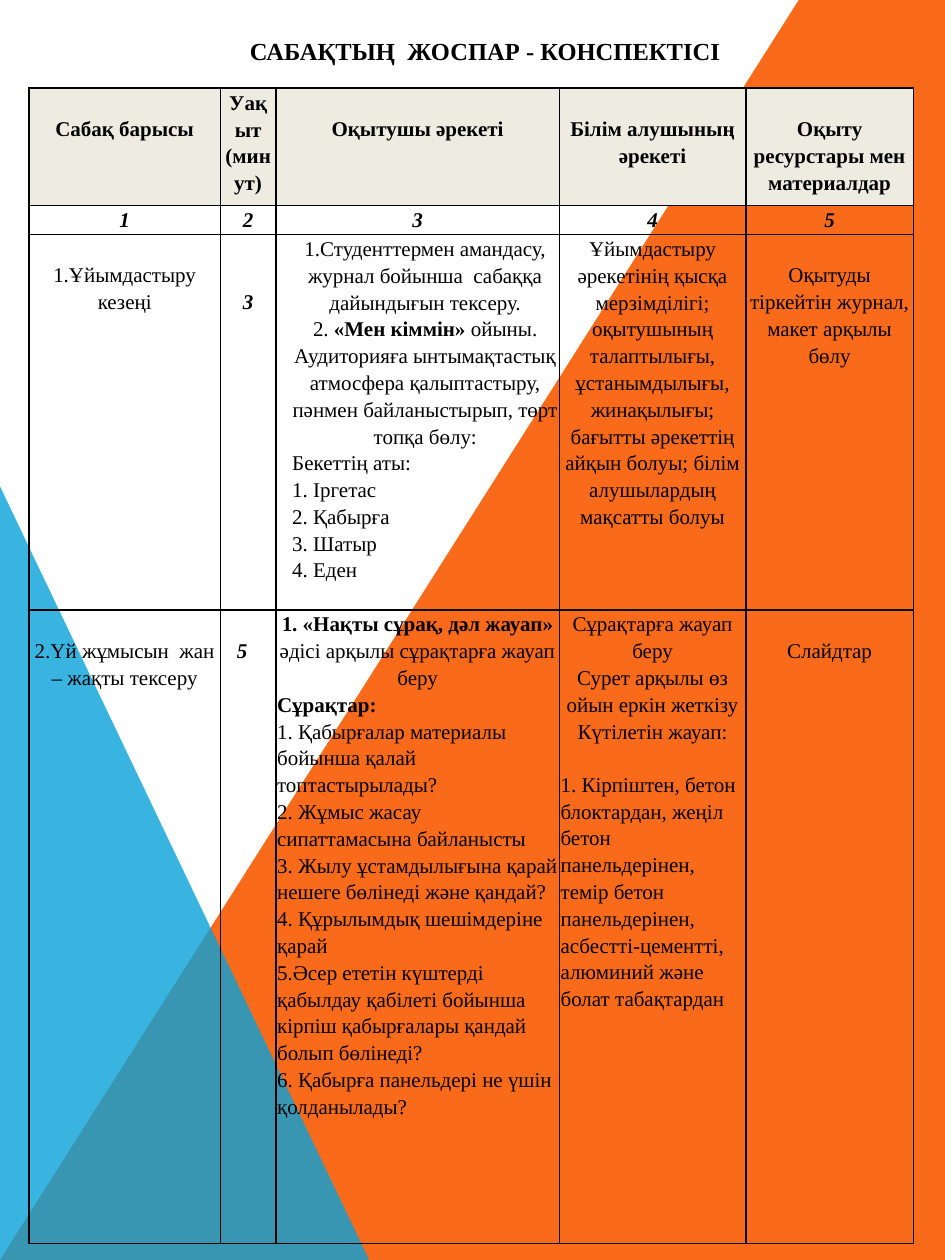
from typing import NamedTuple

from lxml import etree
from pptx import Presentation
from pptx.dml.color import RGBColor
from pptx.enum.shapes import MSO_SHAPE
from pptx.enum.text import MSO_ANCHOR, MSO_AUTO_SIZE, PP_ALIGN
from pptx.oxml.ns import qn
from pptx.util import Inches, Pt

CENTER, LEFT = PP_ALIGN.CENTER, PP_ALIGN.LEFT
TOP, MIDDLE = MSO_ANCHOR.TOP, MSO_ANCHOR.MIDDLE
FIXED_SIZE = MSO_AUTO_SIZE.NONE
RIGHT_TRIANGLE = MSO_SHAPE.RIGHT_TRIANGLE

FONT = "Times New Roman"
BLACK, ORANGE, BLUE, HEADER_FILL = "000000", "F96A1B", "08A1D9", "EEECE1"
LINE_HEIGHT = 0.21
COLUMN_WIDTHS = [1.52, 0.44, 2.25, 1.48, 1.33]
ROW_HEIGHTS = [0.93, 0.23, 2.98, 5.03]


class Line(NamedTuple):
    """A paragraph whose ** marks enclose bold words."""
    text: str
    align: PP_ALIGN = CENTER
    indent: float = 0
    italic: bool = False
    gap: float = 0


class Entry(NamedTuple):
    """The paragraphs of a cell and the number of lines they start below its top."""
    lines: list
    offset: int = 0


HEADINGS = [
    Entry([Line("**Сабақ барысы**")], 1),
    Entry([Line("**Уақыт (минут)**")]),
    Entry([Line("**Оқытушы әрекеті**")], 1),
    Entry([Line("**Білім алушының әрекеті**")], 1),
    Entry([Line("**Оқыту ресурстары мен материалдар**")], 1),
]
NUMBERS = [Entry([Line(f"**{number}**", italic=True)]) for number in range(1, 6)]

STATIONS = ["Бекеттің аты:", "1. Іргетас", "2. Қабырға", "3. Шатыр", "4. Еден"]
ORGANISATION = [
    Entry([Line("1.Ұйымдастыру кезеңі")], 1),
    Entry([Line("**3**", italic=True)], 2),
    Entry([
        Line("1.Студенттермен амандасу, журнал бойынша  сабаққа дайындығын тексеру.",
             indent=0.12),
        Line("2. **«Мен кіммін»** ойыны. Аудиторияға ынтымақтастық атмосфера "
             "қалыптастыру, пәнмен байланыстырып, төрт топқа бөлу:", indent=0.12),
        *[Line(station, LEFT, 0.12) for station in STATIONS],
    ]),
    Entry([Line("Ұйымдастыру әрекетінің қысқа мерзімділігі; оқытушының талаптылығы, "
                "ұстанымдылығы, жинақылығы; бағытты әрекеттің айқын болуы; "
                "білім алушылардың мақсатты болуы")]),
    Entry([Line("Оқытуды тіркейтін журнал, макет арқылы бөлу")], 1),
]

QUESTIONS = [
    "**Сұрақтар:**",
    "1. Қабырғалар материалы бойынша қалай топтастырылады?",
    "2. Жұмыс жасау сипаттамасына байланысты",
    "3. Жылу ұстамдылығына қарай нешеге бөлінеді және қандай?",
    "4. Құрылымдық шешімдеріне қарай",
    "5.Әсер ететін күштерді қабылдау қабілеті бойынша кірпіш қабырғалары "
    "қандай болып бөлінеді?",
    "6. Қабырға панельдері не үшін қолданылады?",
]
HOMEWORK = [
    Entry([Line("2.Үй жұмысын  жан – жақты тексеру")], 1),
    Entry([Line("**5**", LEFT, 0.12, italic=True)], 1),
    Entry([
        Line("**1. «Нақты сұрақ, дәл жауап»** әдісі арқылы сұрақтарға жауап беру"),
        *[Line(question, LEFT) for question in QUESTIONS],
    ]),
    Entry([
        Line("Сұрақтарға жауап беру"),
        Line("Сурет арқылы өз ойын еркін жеткізу"),
        Line("Күтілетін жауап:"),
        Line("1. Кірпіштен, бетон блоктардан, жеңіл бетон панельдерінен, темір бетон "
             "панельдерінен, асбестті-цементті, алюминий және болат табақтардан",
             LEFT, gap=LINE_HEIGHT),
    ]),
    Entry([Line("Слайдтар")], 1),
]


def rgb(hex_color):
    """Return the colour of a hex string."""
    return RGBColor.from_string(hex_color)


def style_font(font, size, bold, italic=False):
    """Apply the lesson plan's typeface."""
    font.name, font.size, font.bold, font.italic = FONT, Pt(size), bold, italic
    font.color.rgb = rgb(BLACK)


def fill_plain(shape, color):
    """Give a background shape a flat fill without outline or shadow."""
    shape.shadow.inherit = False
    shape.fill.solid()
    shape.fill.fore_color.rgb = rgb(color)
    shape.line.fill.background()


def add_backdrop(slide):
    """Draw the orange slope and the translucent blue triangle."""
    builder = slide.shapes.build_freeform(0, Inches(10))
    corners = [(6.34, 0), (7.5, 0), (7.5, 10)]
    builder.add_line_segments([(Inches(x), Inches(y)) for x, y in corners], close=True)
    fill_plain(builder.convert_to_shape(), ORANGE)

    triangle = slide.shapes.add_shape(
        RIGHT_TRIANGLE, 0, Inches(3.86), Inches(2.93), Inches(6.14))
    fill_plain(triangle, BLUE)
    color = triangle._element.spPr.find(".//" + qn("a:srgbClr"))
    etree.SubElement(color, qn("a:alpha"), val="80000")


def set_title(slide, text):
    """Place and format the heading of the plan."""
    title = slide.shapes.title
    title.left, title.top = Inches(1.43), Inches(0.23)
    title.width, title.height = Inches(4.84), Inches(0.34)
    frame = title.text_frame
    frame.text = text
    frame.word_wrap = True
    frame.auto_size = FIXED_SIZE
    frame.vertical_anchor = MIDDLE
    frame.paragraphs[0].alignment = CENTER
    style_font(frame.paragraphs[0].runs[0].font, 14, True)


def write_line(paragraph, line):
    """Write one paragraph with its bold parts."""
    paragraph.alignment = line.align
    paragraph.line_spacing = 1.15
    if line.gap:
        paragraph.space_before = Inches(line.gap)
    if line.indent:
        paragraph._p.get_or_add_pPr().set("marL", str(Inches(line.indent)))
    for index, part in enumerate(line.text.split("**")):
        if part:
            run = paragraph.add_run()
            run.text = part
            style_font(run.font, 12, index % 2 == 1, line.italic)


def add_borders(cell):
    """Outline a cell on all four sides."""
    properties = cell._tc.get_or_add_tcPr()
    for index, side in enumerate(("lnL", "lnR", "lnT", "lnB")):
        border = etree.Element(qn(f"a:{side}"), w=str(Pt(1)))
        fill = etree.SubElement(border, qn("a:solidFill"))
        etree.SubElement(fill, qn("a:srgbClr"), val=BLACK)
        properties.insert(index, border)


def fill_cell(cell, entry, color):
    """Write an entry into a cell and format the cell."""
    cell.margin_left = cell.margin_right = Inches(0.01)
    cell.margin_top = Inches(entry.offset * LINE_HEIGHT)
    cell.margin_bottom = 0
    cell.vertical_anchor = TOP
    if color:
        cell.fill.solid()
        cell.fill.fore_color.rgb = rgb(color)
    else:
        cell.fill.background()
    add_borders(cell)
    frame = cell.text_frame
    for index, line in enumerate(entry.lines):
        write_line(frame.add_paragraph() if index else frame.paragraphs[0], line)


def add_plan(slide, rows):
    """Add the table of lesson stages."""
    plan = slide.shapes.add_table(
        len(rows), len(COLUMN_WIDTHS), Inches(0.23), Inches(0.7),
        Inches(sum(COLUMN_WIDTHS)), Inches(sum(ROW_HEIGHTS))).table
    plan.first_row = plan.horz_banding = False
    for column, width in zip(plan.columns, COLUMN_WIDTHS):
        column.width = Inches(width)
    for index, (row, height, entries) in enumerate(zip(plan.rows, ROW_HEIGHTS, rows)):
        row.height = Inches(height)
        for cell, entry in zip(row.cells, entries):
            fill_cell(cell, entry, None if index else HEADER_FILL)


def main():
    """Build the lesson plan slide."""
    deck = Presentation()
    deck.slide_width, deck.slide_height = Inches(7.5), Inches(10)
    slide = deck.slides.add_slide(deck.slide_layouts[5])
    add_backdrop(slide)
    set_title(slide, "САБАҚТЫҢ  ЖОСПАР - КОНСПЕКТІСІ")
    add_plan(slide, [HEADINGS, NUMBERS, ORGANISATION, HOMEWORK])
    deck.save("out.pptx")


if __name__ == "__main__":
    main()
